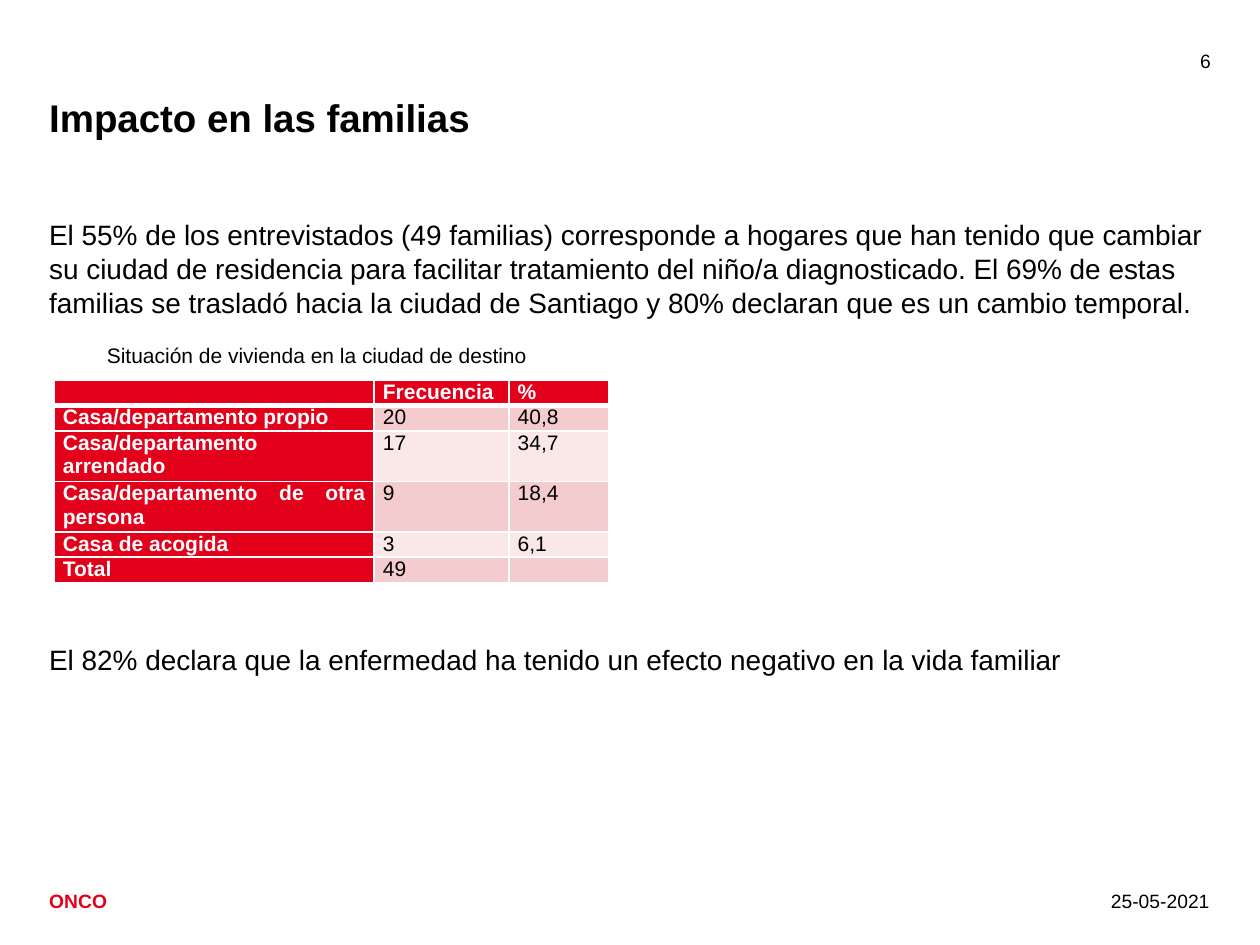
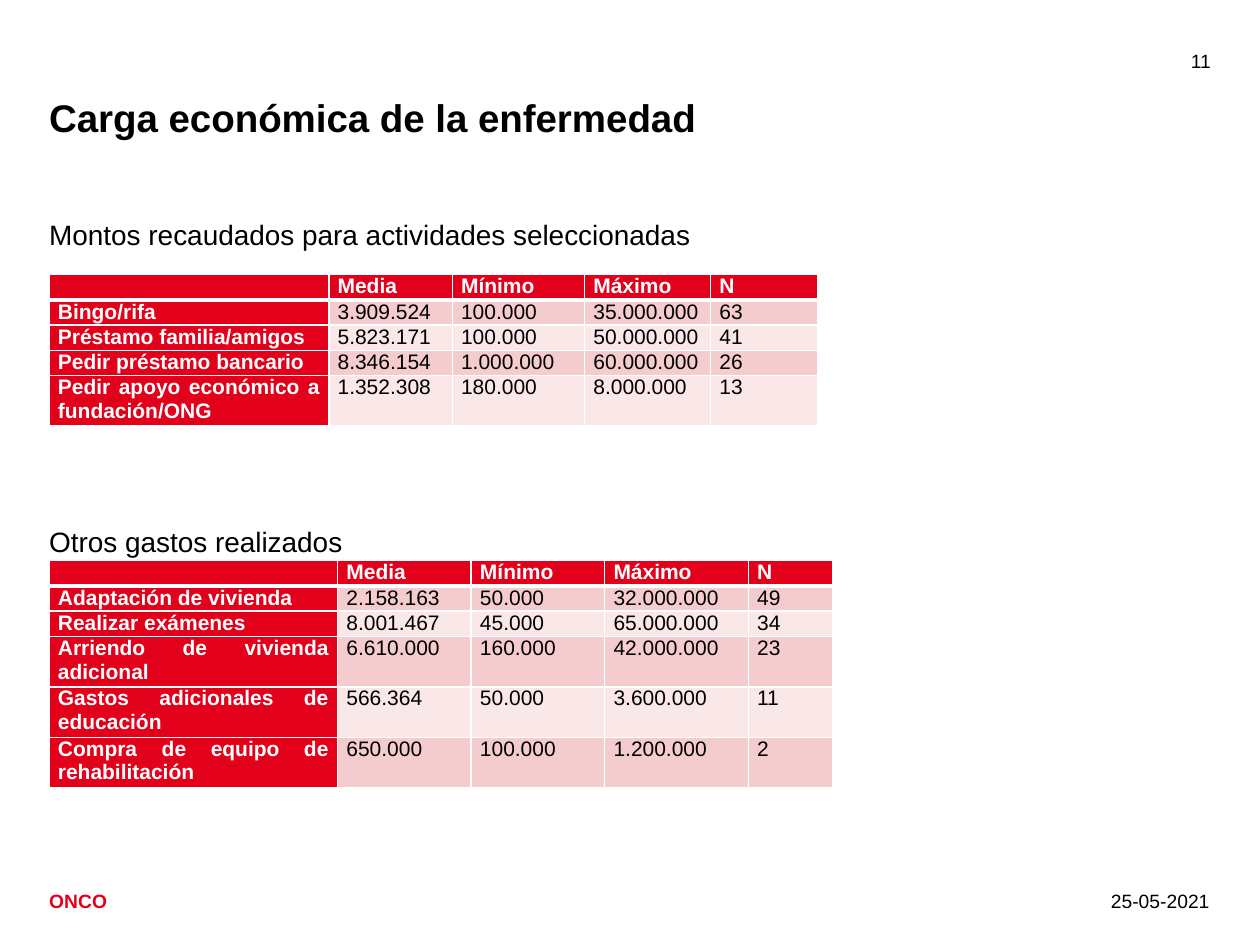
import pptx
import pptx.util
import pptx.dml.color
import pptx.enum.text
from lxml import etree
from pptx.oxml.ns import qn

Inches, Pt = pptx.util.Inches, pptx.util.Pt
ALIGN = pptx.enum.text.PP_ALIGN
ANCHOR = pptx.enum.text.MSO_ANCHOR

FONT = "Arial"
RED, BLACK, WHITE = "E2001A", "000000", "FFFFFF"
BANDS = ["F4CCCD", "FAE7E8"]
LEFT, WIDTH = 0.39, 9.22
FOOTER_TOP = 7.06
ROW_HEIGHT = 0.18
TABLE_SIZE = 12

ORGANISATION, DATE = "ONCO", "25-05-2021"
AMOUNTS_HEADER = ["", "Media", "Mínimo", "Máximo", "N"]

SLIDES = [
    {
        "number": "6",
        "title": "Impacto en las familias",
        "body": [
            "El 55% de los entrevistados (49 familias) corresponde a hogares que han tenido que "
            "cambiar su ciudad de residencia para facilitar tratamiento del niño/a diagnosticado. "
            "El 69% de estas familias se trasladó hacia la ciudad de Santiago y 80% declaran que "
            "es un cambio temporal.",
            "El 82% declara que la enfermedad ha tenido un efecto negativo en la vida familiar",
        ],
        "body_gap": 185,
        "caption": "Situación de vivienda en la ciudad de destino",
        "tables": [
            {
                "at": (0.43, 3.02),
                "columns": [2.54, 1.07, 0.79],
                "rows": [
                    ["", "Frecuencia", "%"],
                    ["Casa/departamento propio", "20", "40,8"],
                    ["Casa/departamento arrendado", "17", "34,7"],
                    ["Casa/departamento de otra persona", "9", "18,4"],
                    ["Casa de acogida", "3", "6,1"],
                    ["Total", "49", ""],
                ],
            },
        ],
    },
    {
        "number": "11",
        "title": "Carga económica de la enfermedad",
        "body": [
            "Montos recaudados para actividades seleccionadas",
            "Otros gastos realizados",
        ],
        "body_gap": 156,
        "tables": [
            {
                "at": (LEFT, 2.18),
                "columns": [2.22, 0.98, 1.05, 1, 0.85],
                "rows": [
                    AMOUNTS_HEADER,
                    ["Bingo/rifa", "3.909.524", "100.000", "35.000.000", "63"],
                    ["Préstamo familia/amigos", "5.823.171", "100.000", "50.000.000", "41"],
                    ["Pedir préstamo bancario", "8.346.154", "1.000.000", "60.000.000", "26"],
                    ["Pedir apoyo económico a fundación/ONG",
                     "1.352.308", "180.000", "8.000.000", "13"],
                ],
            },
            {
                "at": (LEFT, 4.45),
                "columns": [2.29, 1.06, 1.06, 1.14, 0.67],
                "rows": [
                    AMOUNTS_HEADER,
                    ["Adaptación de vivienda", "2.158.163", "50.000", "32.000.000", "49"],
                    ["Realizar exámenes", "8.001.467", "45.000", "65.000.000", "34"],
                    ["Arriendo de vivienda adicional", "6.610.000", "160.000", "42.000.000", "23"],
                    ["Gastos adicionales de educación", "566.364", "50.000", "3.600.000", "11"],
                    ["Compra de equipo de rehabilitación", "650.000", "100.000", "1.200.000", "2"],
                ],
            },
        ],
    },
]


def rgb(color):
    return pptx.dml.color.RGBColor.from_string(color)


def style(p, size, color=BLACK, bold=False, align=ALIGN.LEFT):
    p.alignment = align
    p.font.name, p.font.size, p.font.bold = FONT, Pt(size), bold
    p.font.color.rgb = rgb(color)


def add_text(s, at, lines, size, color=BLACK, bold=False, align=ALIGN.LEFT,
             anchor=ANCHOR.TOP, inset=0, gap=0, spacing=None):
    """Add a text box; gap is the space in points before each later paragraph."""
    tf = s.shapes.add_textbox(*map(Inches, at)).text_frame
    tf.word_wrap = True
    tf.vertical_anchor = anchor
    tf.margin_left = tf.margin_right = Inches(inset)
    tf.margin_top = tf.margin_bottom = Inches(inset / 2)
    for i, line in enumerate(lines):
        p = tf.add_paragraph() if i else tf.paragraphs[0]
        p.text = line
        style(p, size, color, bold, align)
        p.line_spacing = spacing
        if i:
            p.space_before = Pt(gap)


def set_borders(cell, top, bottom):
    """Draw white borders, with top and bottom widths in points."""
    tc_pr = cell._tc.get_or_add_tcPr()
    for side, width in (("L", 1), ("R", 1), ("T", top), ("B", bottom)):
        line = etree.SubElement(tc_pr, qn(f"a:ln{side}"), w=str(Pt(width)))
        fill = etree.SubElement(line, qn("a:solidFill"))
        etree.SubElement(fill, qn("a:srgbClr"), val=WHITE)


def fill_cell(cell, text, row, col):
    is_heading = row == 0 or col == 0
    set_borders(cell, top=3 if row == 1 else 1, bottom=3 if row == 0 else 1)
    cell.fill.solid()
    cell.fill.fore_color.rgb = rgb(RED if is_heading else BANDS[(row - 1) % 2])
    cell.margin_left = cell.margin_right = Inches(0.07)
    cell.margin_top = cell.margin_bottom = 0
    p = cell.text_frame.paragraphs[0]
    if text:
        p.text = text
    else:
        etree.SubElement(p._p, qn("a:endParaRPr"), sz=str(TABLE_SIZE * 100))
    style(p, TABLE_SIZE, WHITE if is_heading else BLACK, is_heading, ALIGN.JUSTIFY)


def add_table(s, at, columns, rows):
    size = sum(columns), ROW_HEIGHT * len(rows)
    table = s.shapes.add_table(len(rows), len(columns), *map(Inches, at + size)).table
    table.horz_banding = False
    for column, width in zip(table.columns, columns):
        column.width = Inches(width)
    for r, texts in enumerate(rows):
        for c, text in enumerate(texts):
            fill_cell(table.cell(r, c), text, r, c)


def add_frame(s, title, number):
    """Add the title, page number and footer that every slide carries."""
    add_text(s, (LEFT, FOOTER_TOP, 1.69, 0.19), [ORGANISATION], 11, RED, bold=True)
    add_text(s, (LEFT, 0.79, WIDTH, 0.33), [title], 22, bold=True, spacing=0.9)
    add_text(s, (8.62, FOOTER_TOP, 0.98, 0.19), [DATE], 11, align=ALIGN.RIGHT)
    add_text(s, (9.05, 0.39, 0.56, 0.19), [number], 11, align=ALIGN.RIGHT,
             anchor=ANCHOR.MIDDLE)


def main():
    prs = pptx.Presentation()
    prs.slide_width, prs.slide_height = Inches(10), Inches(7.5)
    for content in SLIDES:
        s = prs.slides.add_slide(prs.slide_layouts[6])
        add_frame(s, content["title"], content["number"])
        add_text(s, (LEFT, 1.73, WIDTH, 4.88), content["body"], 16, gap=content["body_gap"])
        for table in content["tables"]:
            add_table(s, **table)
        if "caption" in content:
            add_text(s, (0.75, 2.67, 3.6, 0.3), [content["caption"]], 12,
                     anchor=ANCHOR.MIDDLE, inset=0.1)
    prs.save("out.pptx")


if __name__ == "__main__":
    main()
